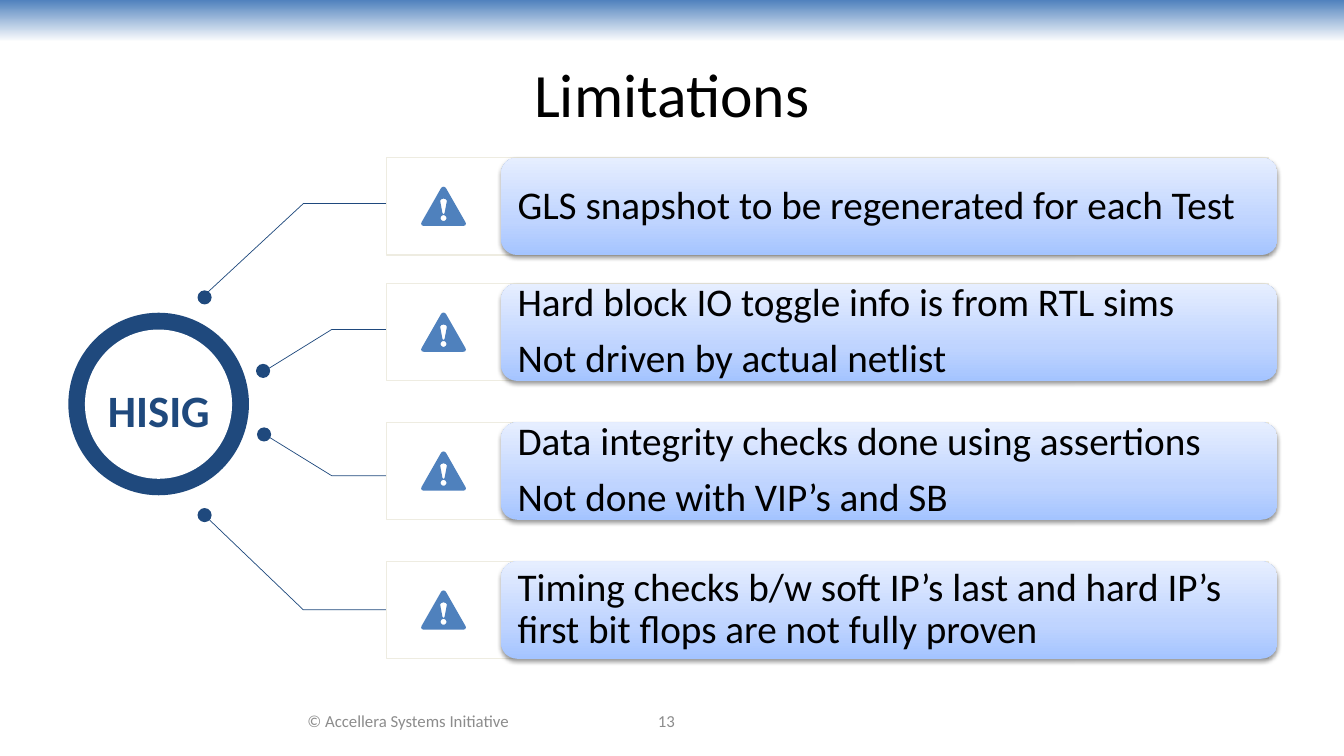
from dataclasses import dataclass
from math import cos, pi, sin

from lxml import etree
from pptx import Presentation
from pptx.dml.color import RGBColor
from pptx.enum.shapes import MSO_SHAPE
from pptx.enum.text import MSO_ANCHOR, PP_ALIGN
from pptx.oxml.ns import qn
from pptx.util import Pt

RECT, ROUNDED, OVAL = MSO_SHAPE.RECTANGLE, MSO_SHAPE.ROUNDED_RECTANGLE, MSO_SHAPE.OVAL
TOP, MIDDLE = MSO_ANCHOR.TOP, MSO_ANCHOR.MIDDLE
LEFT, CENTER = PP_ALIGN.LEFT, PP_ALIGN.CENTER

Point = tuple[float, float]
Box = tuple[float, float, float, float]
Stops = tuple[tuple[int, str], ...]


@dataclass(frozen=True)
class Theme:
    font: str = "Calibri"
    text: str = "000000"
    footer: str = "8C8C8C"
    navy: str = "1F497D"
    blue: str = "4F81BD"
    frame: str = "EEECE1"
    white: str = "FFFFFF"
    band_stops: Stops = ((0, "4F81BD"), (100, "FFFFFF"))
    bar_stops: Stops = ((0, "A4C4FF"), (35, "BFD4FF"), (100, "E6EEFF"))
    title_size: float = 44
    hub_size: float = 32
    body_size: float = 28
    footer_size: float = 12


@dataclass(frozen=True)
class Limitation:
    top: float
    dot: Point
    leader: tuple[Point, Point, Point]
    lines: tuple[str, ...]


THEME = Theme()
FRAME_LEFT, FRAME_WIDTH = 275.8, 630
BAR_LEFT, BAR_WIDTH = 358, 554.5
ROW_HEIGHT = 69.6
DOT_SIZE = 10.1
OUTER_ELBOW, INNER_ELBOW = 216.7, 236.9

LIMITATIONS = (
    Limitation(112.6, (141.1, 207.4),
               ((147.6, 209.5), (OUTER_ELBOW, 145.4), (FRAME_LEFT, 145.4)),
               ("GLS snapshot to be regenerated for each Test",)),
    Limitation(202.5, (182.9, 259.9),
               ((191.5, 263.5), (INNER_ELBOW, 235.4), (FRAME_LEFT, 235.4)),
               ("Hard block IO toggle info is from RTL sims",
                "Not driven by actual netlist")),
    Limitation(301.7, (183.6, 305.3),
               ((191.5, 311.8), (INNER_ELBOW, 339.8), (FRAME_LEFT, 339.8)),
               ("Data integrity checks done using assertions",
                "Not done with VIP’s and SB")),
    Limitation(401, (141.1, 362.9),
               ((147.6, 369.4), (OUTER_ELBOW, 435.6), (FRAME_LEFT, 435.6)),
               ("Timing checks b/w soft IP’s last and hard IP’s "
                "first bit flops are not fully proven",)),
)

# Warning sign contours, relative to its top left corner
WARNING_LEFT, WARNING_DROP = 300.8, 20.8
TRIANGLE = ((14.3, 0.9), (15.2, 0.2), (16, 0), (16.8, 0.2), (17.7, 0.9),
            (31.6, 25.2), (32, 26.4), (31.5, 27.6), (30.2, 28),
            (1.8, 28), (0.5, 27.6), (0, 26.4), (0.4, 25.2))
MARK_STROKE = ((13.6, 10.1), (14.3, 9), (16, 8.5), (17.7, 9), (18.4, 10.1),
               (16.8, 18.7), (16.4, 19.4), (15.6, 19.4), (15.2, 18.7))
MARK_DOT = tuple((16 + 2.1 * cos(step * pi / 8), 22.4 + 2.1 * sin(step * pi / 8))
                 for step in range(16))


def rgb(color: str) -> RGBColor:
    return RGBColor.from_string(color)


def in_points(points):
    return [(Pt(x), Pt(y)) for x, y in points]


def add_block(slide, kind, box: Box, fill: str | None = None, line: str | None = None):
    block = slide.shapes.add_shape(kind, *map(Pt, box))
    block.shadow.inherit = False
    if fill:
        block.fill.solid()
        block.fill.fore_color.rgb = rgb(fill)
    else:
        block.fill.background()
    if line:
        block.line.color.rgb = rgb(line)
        block.line.width = Pt(0.75)
    else:
        block.line.fill.background()
    return block


def set_gradient(block, stops: Stops, angle: float) -> None:
    block.fill.gradient()
    block.fill.gradient_angle = angle
    stop_list = block._element.spPr.find(".//" + qn("a:gsLst"))
    for old_stop in list(stop_list):
        stop_list.remove(old_stop)
    for percent, color in stops:
        stop = etree.SubElement(stop_list, qn("a:gs"), pos=str(percent * 1000))
        etree.SubElement(stop, qn("a:srgbClr"), val=color)


def add_soft_shadow(block) -> None:
    effects = block._element.spPr.find(qn("a:effectLst"))
    shadow = etree.SubElement(effects, qn("a:outerShdw"), blurRad=str(Pt(3.1)),
                              dist=str(Pt(1.6)), dir="5400000", rotWithShape="0")
    color = etree.SubElement(shadow, qn("a:srgbClr"), val=THEME.text)
    etree.SubElement(color, qn("a:alpha"), val="38000")


def write(frame, lines: tuple[str, ...], size: float, color: str,
          align=CENTER, anchor=MIDDLE, bold: bool = False) -> None:
    frame.word_wrap = True
    frame.vertical_anchor = anchor
    frame.text = "\n".join(lines)
    for paragraph in frame.paragraphs:
        paragraph.alignment = align
        for run in paragraph.runs:
            run.font.name = THEME.font
            run.font.size = Pt(size)
            run.font.bold = bold
            run.font.color.rgb = rgb(color)


def add_label(slide, box: Box, text: str, size: float, color: str,
              anchor=MIDDLE, bold: bool = False) -> None:
    label = slide.shapes.add_textbox(*map(Pt, box))
    write(label.text_frame, (text,), size, color, anchor=anchor, bold=bold)


def add_leader(slide, points: tuple[Point, ...]) -> None:
    start, *rest = in_points(points)
    builder = slide.shapes.build_freeform(*start)
    builder.add_line_segments(rest, close=False)
    leader = builder.convert_to_shape()
    leader.shadow.inherit = False
    leader.fill.background()
    leader.line.color.rgb = rgb(THEME.navy)
    leader.line.width = Pt(0.5)


def add_warning(slide, left: float, top: float) -> None:
    start, *rest = in_points(TRIANGLE)
    builder = slide.shapes.build_freeform(*start)
    builder.add_line_segments(rest)
    for hole in (MARK_STROKE, MARK_DOT):
        start, *rest = in_points(hole)
        builder.move_to(*start)
        builder.add_line_segments(rest)
    warning = builder.convert_to_shape(Pt(left), Pt(top))
    warning.shadow.inherit = False
    warning.fill.solid()
    warning.fill.fore_color.rgb = rgb(THEME.blue)
    warning.line.fill.background()


def add_limitation(slide, item: Limitation) -> None:
    add_block(slide, OVAL, (*item.dot, DOT_SIZE, DOT_SIZE), THEME.navy)
    add_leader(slide, item.leader)
    add_block(slide, RECT, (FRAME_LEFT, item.top, FRAME_WIDTH, ROW_HEIGHT), line=THEME.frame)
    bar = add_block(slide, ROUNDED, (BAR_LEFT, item.top, BAR_WIDTH, ROW_HEIGHT))
    set_gradient(bar, THEME.bar_stops, 90)
    add_soft_shadow(bar)
    frame = bar.text_frame
    frame.margin_left = frame.margin_right = Pt(8.4)
    frame.margin_top = frame.margin_bottom = Pt(8.4)
    write(frame, item.lines, THEME.body_size, THEME.text, align=LEFT)
    for paragraph in frame.paragraphs:
        paragraph.line_spacing = 0.9
        paragraph.space_after = Pt(9.8)
    add_warning(slide, WARNING_LEFT, item.top + WARNING_DROP)


def main() -> None:
    deck = Presentation()
    deck.slide_width, deck.slide_height = Pt(960), Pt(540)
    slide = deck.slides.add_slide(deck.slide_layouts[6])

    # Header band and title
    band = add_block(slide, RECT, (0, 0, 960, 30))
    set_gradient(band, THEME.band_stops, 270)
    add_label(slide, (48, 21.6, 864, 90), "Limitations", THEME.title_size, THEME.text)

    # Hub ring
    add_block(slide, OVAL, (48.8, 223.4, 129, 130.4), THEME.navy)
    add_block(slide, OVAL, (60.7, 235.4, 105.1, 106.6), THEME.white)
    add_label(slide, (47.3, 270, 132.5, 38.2), "HISIG", THEME.hub_size, THEME.navy,
              anchor=TOP, bold=True)

    # Limitation rows
    for item in LIMITATIONS:
        add_limitation(slide, item)

    # Footer
    add_label(slide, (383.8, 500.4, 184.3, 28.8), "13", THEME.footer_size, THEME.footer)
    add_label(slide, (175.7, 500.4, 231.8, 28.8), "© Accellera Systems Initiative",
              THEME.footer_size, THEME.footer)

    deck.save("out.pptx")


if __name__ == "__main__":
    main()
